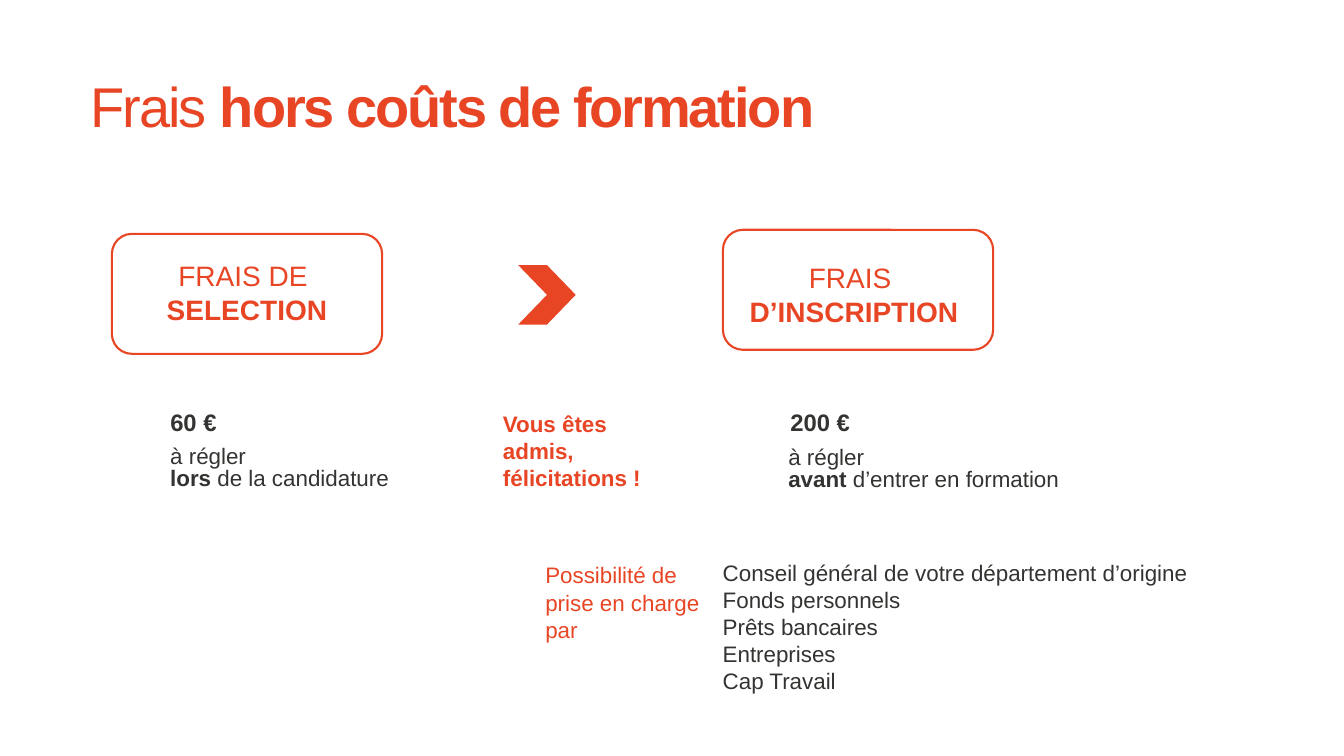
from pptx import Presentation
from pptx.dml.color import RGBColor
from pptx.enum.shapes import MSO_SHAPE as Preset
from pptx.enum.text import MSO_ANCHOR as Anchor, PP_ALIGN as Align
from pptx.util import Inches, Pt

ORANGE, DARK, WHITE = "E84525", "333331", "FFFFFF"
FRAME_W, FRAME_H = 2.68, 1.19


def color(hex_code):
    return RGBColor.from_string(hex_code)


def add_preset(slide, preset, box, fill=None, line=None):
    shape = slide.shapes.add_shape(preset, *map(Inches, box))
    shape.shadow.inherit = False
    if fill:
        shape.fill.solid()
        shape.fill.fore_color.rgb = color(fill)
    else:
        shape.fill.background()
    if line:
        shape.line.color.rgb = color(line)
        shape.line.width = Pt(1.5)
    else:
        shape.line.fill.background()


def add_text(slide, box, paragraphs, size, ink, bold=False, spacing=1.0,
             align=Align.LEFT, anchor=Anchor.TOP, tracking=0, indent=0):
    """Write paragraphs; **...** marks bold parts, a newline is a line break."""
    frame = slide.shapes.add_textbox(*map(Inches, box)).text_frame
    frame.word_wrap = True
    frame.vertical_anchor = anchor
    for index, text in enumerate(paragraphs):
        paragraph = frame.add_paragraph() if index else frame.paragraphs[0]
        paragraph.alignment = align
        paragraph.line_spacing = spacing
        font = paragraph.font
        font.name, font.size, font.bold = "Arial", Pt(size), bold
        font.color.rgb = color(ink)
        if indent:
            properties = paragraph._p.get_or_add_pPr()
            properties.set("marL", str(Inches(indent)))
            properties.set("indent", "0")
        for part, words in enumerate(text.split("**")):
            for row, line in enumerate(words.split("\n")):
                if row:
                    paragraph.add_line_break()
                if line:
                    run = paragraph.add_run()
                    run.text = line
                    if part % 2:
                        run.font.bold = True
                    if tracking:
                        run._r.get_or_add_rPr().set("spc", str(tracking))


def add_title(slide, box):
    add_text(slide, box, ["Frais **hors coûts de formation**"], 40, ORANGE,
             spacing=0.9, tracking=-150)


def add_fee(slide, left, top, label, label_shift, amount, amount_left, note, note_at):
    """Framed label with its amount and due date below."""
    add_preset(slide, Preset.ROUNDED_RECTANGLE, (left, top, FRAME_W, FRAME_H), line=ORANGE)
    dx, dy = label_shift
    add_text(slide, (left + dx, top + dy, FRAME_W, 0.77), [label], 20, ORANGE,
             align=Align.CENTER)
    add_text(slide, (amount_left, 3.65, 2.75, 1.07), [amount], 17, DARK,
             bold=True, anchor=Anchor.MIDDLE)
    add_text(slide, (*note_at, 3.47, 0.33), note, 16, DARK, spacing=0.8)


def add_admission(slide, left, top):
    """Chevron between the two fees, with the congratulation below."""
    add_preset(slide, Preset.CHEVRON, (left + 0.25, top, 0.57, 0.59), fill=ORANGE)
    add_text(slide, (left, top + 1.39, 1.89, 0.33),
             ["Vous êtes admis, félicitations !"], 16, ORANGE, bold=True, spacing=1.01)


def add_funding(slide, left, top):
    """Possible funding sources."""
    add_text(slide, (left, top + 0.02, 1.89, 0.33),
             ["Possibilité de prise en charge par"], 16, ORANGE, spacing=1.01)
    add_text(slide, (left + 1.56, top, 5.53, 1.45),
             ["Conseil général de votre département d’origine", "Fonds personnels",
              "Prêts bancaires\nEntreprises", "Cap Travail"], 16, DARK, indent=0.2)


def main():
    deck = Presentation()
    deck.slide_width, deck.slide_height = Inches(13.33), Inches(7.5)
    slide = deck.slides.add_slide(deck.slide_layouts[6])
    slide.background.fill.solid()
    slide.background.fill.fore_color.rgb = color(WHITE)

    add_title(slide, (0.8, 0.74, 10.18, 0.91))
    add_fee(slide, 1.11, 2.32, "FRAIS DE \n**SELECTION**", (0, 0.2), "60 €", 1.59,
            ["à régler", "**lors** de la candidature"], (1.59, 4.39))
    add_admission(slide, 4.89, 2.63)
    add_fee(slide, 7.17, 2.28, "FRAIS \n**D’INSCRIPTION**", (-0.04, 0.26), "200 €", 7.74,
            ["à régler \n**avant** d’entrer en formation"], (7.72, 4.4))
    add_funding(slide, 5.31, 5.5)

    deck.save("out.pptx")


if __name__ == "__main__":
    main()
